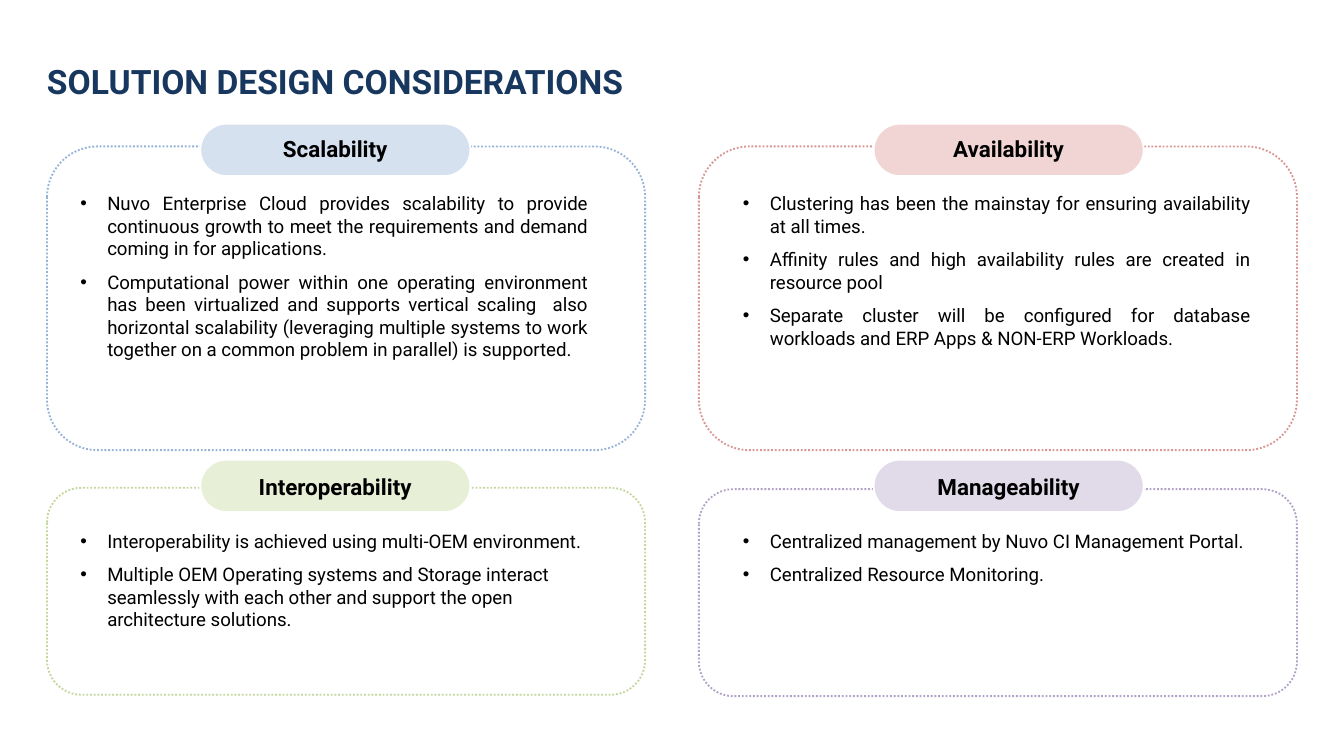
from pptx import Presentation
from pptx.dml.color import RGBColor
from pptx.enum.dml import MSO_LINE
from pptx.enum.shapes import MSO_SHAPE
from pptx.enum.text import MSO_ANCHOR, MSO_AUTO_SIZE, PP_ALIGN
from pptx.oxml.ns import qn
from pptx.util import Inches, Pt
from lxml.etree import SubElement


def color(code):
    return RGBColor.from_string(code)


class Deck:
    font = "Roboto"
    ink = "000000"
    paper = "FFFFFF"

    def __init__(self, wide, high):
        self.prs = Presentation()
        self.prs.slide_width = Inches(wide)
        self.prs.slide_height = Inches(high)
        self.slide = self.prs.slides.add_slide(self.prs.slide_layouts[6])

    def round(self, box, fill, line, dash=None):
        shape = self.slide.shapes.add_shape(
            MSO_SHAPE.ROUNDED_RECTANGLE, *map(Inches, box))
        shape.shadow.inherit = False
        shape.fill.solid()
        shape.fill.fore_color.rgb = color(fill)
        shape.line.color.rgb = color(line)
        shape.line.width = Pt(1)
        if dash:
            shape.line.dash_style = dash
        return shape

    def pill(self, box, fill):
        self.round(box, fill, self.paper).adjustments[0] = 0.5

    def frame(self, box):
        frame = self.slide.shapes.add_textbox(*map(Inches, box)).text_frame
        frame.word_wrap = True
        frame.auto_size = MSO_AUTO_SIZE.SHAPE_TO_FIT_TEXT
        return frame

    def run(self, para, text, size, ink=ink, bold=False):
        run = para.add_run()
        run.text = text
        run.font.name = self.font
        run.font.size = Pt(size)
        run.font.bold = bold
        run.font.color.rgb = color(ink)

    def title(self, box, text, ink):
        frame = self.frame(box)
        frame.margin_left = 0
        frame.vertical_anchor = MSO_ANCHOR.MIDDLE
        self.run(frame.paragraphs[0], text, 18, ink, True)

    def label(self, box, text):
        para = self.frame(box).paragraphs[0]
        para.alignment = PP_ALIGN.CENTER
        self.run(para, text, 12, bold=True)

    def list(self, box, items, align):
        frame = self.frame(box)
        for i, item in enumerate(items):
            para = frame.add_paragraph() if i else frame.paragraphs[0]
            props = para._p.get_or_add_pPr()
            props.set("marL", str(Inches(0.2)))
            props.set("indent", str(-Inches(0.2)))
            SubElement(props, qn("a:buFont"), typeface="Arial")
            SubElement(props, qn("a:buChar"), char="•")
            para.alignment = align
            para.space_after = Pt(6)
            self.run(para, item, 10)


# Left edges of card, pill, label and list in each column
COLS = [(0.35, 1.49, 1.63, 0.5), (5.2, 6.5, 6.64, 5.43)]
# Tops of pill, label and list, height of card, list alignment in each row
ROWS = [(0.92, 0.96, 1.38, 2.26, PP_ALIGN.JUSTIFY),
        (3.42, 3.47, 3.89, 1.54, PP_ALIGN.LEFT)]

# Column, row, heading, card top, line, pill fill, list height, items
PANELS = [
    (0, 0, "Scalability", 1.09, "95B3D7", "D5E1EF", 1.53, [
        "Nuvo Enterprise Cloud provides scalability to provide continuous "
        "growth to meet the requirements and demand coming in for "
        "applications.",
        "Computational power within one operating environment has been "
        "virtualized and supports vertical scaling  also horizontal "
        "scalability (leveraging multiple systems to work together on a "
        "common problem in parallel) is supported."]),
    (1, 0, "Availability", 1.09, "D99694", "F0D5D4", 1.28, [
        "Clustering has been the mainstay for ensuring availability at all "
        "times.",
        "Affinity rules and high availability rules are created in resource "
        "pool",
        "Separate cluster will be configured for database workloads and ERP "
        "Apps & NON-ERP Workloads."]),
    (0, 1, "Interoperability", 3.63, "C3D69B", "E7EFD7", 1.03, [
        "Interoperability is achieved using multi-OEM environment.",
        "Multiple OEM Operating systems and Storage interact seamlessly with "
        "each other and support the open architecture solutions."]),
    (1, 1, "Manageability", 3.64, "B2A2C7", "E0DAE9", 0.52, [
        "Centralized management by Nuvo CI Management Portal.",
        "Centralized Resource Monitoring."]),
]


def main():
    deck = Deck(10, 10 * 9 / 16)
    deck.title((0.35, 0.4, 8.24, 0.4), "SOLUTION DESIGN CONSIDERATIONS",
               "17375E")
    for col, row, head, top, line, fill, tall, items in PANELS:
        card, pill, label, body = COLS[col]
        pill_top, label_top, body_top, high, align = ROWS[row]
        deck.round((card, top, 4.45, high), deck.paper, line,
                   MSO_LINE.ROUND_DOT)
        deck.pill((pill, pill_top, 2.01, 0.39), fill)
        deck.label((label, label_top, 1.73, 0.3), head)
        deck.list((body, body_top, 3.97, tall), items, align)
    deck.prs.save("out.pptx")


if __name__ == "__main__":
    main()
